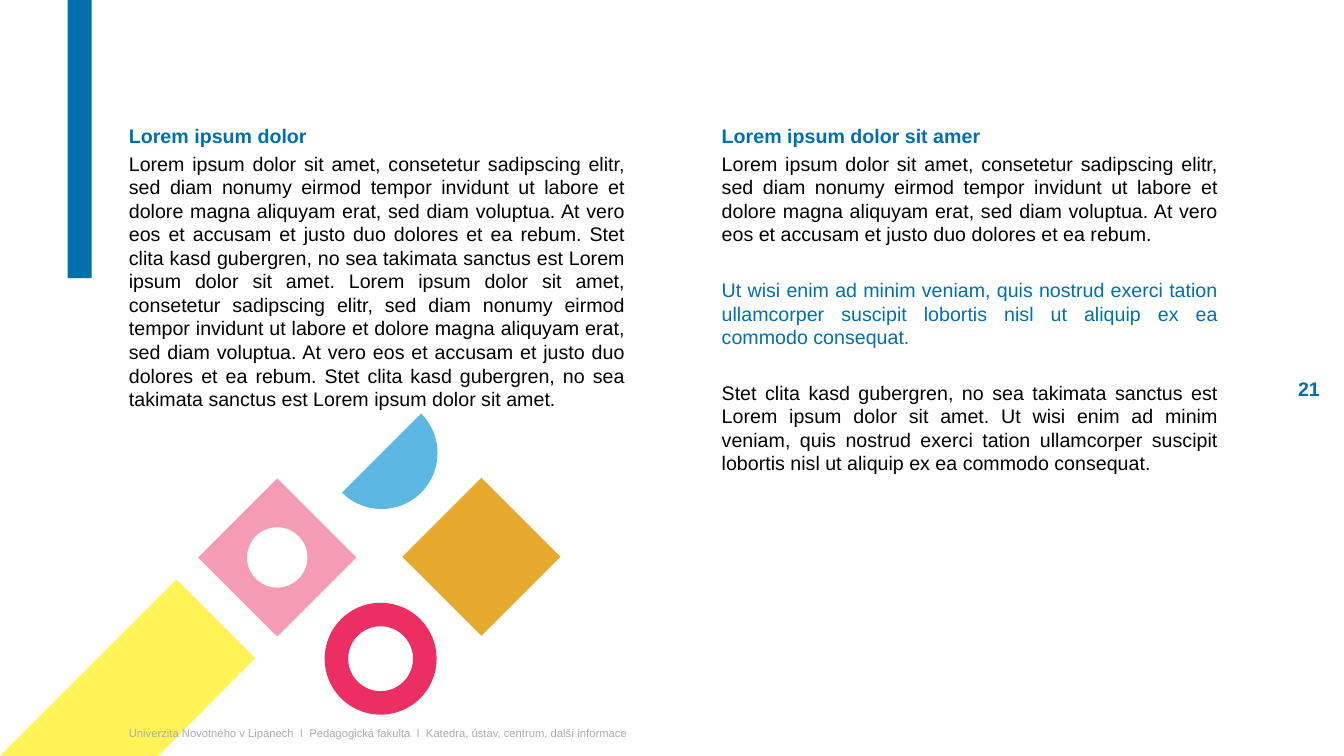
import math

from pptx import Presentation
from pptx.dml.color import RGBColor
from pptx.enum import shapes, text
from pptx.util import Inches, Pt

BLUE = RGBColor(0x00, 0x6F, 0xAD)
SKY = RGBColor(0x5C, 0xB8, 0xE2)
YELLOW = RGBColor(0xFF, 0xF3, 0x58)
PINK = RGBColor(0xF5, 0x9B, 0xB3)
CRIMSON = RGBColor(0xED, 0x2E, 0x62)
GOLD = RGBColor(0xE5, 0xAA, 0x2D)
GREY = RGBColor(0xA9, 0xAB, 0xAE)
BLACK = RGBColor(0x00, 0x00, 0x00)

SECTION_GAP = 23
INTRO = (
    "Lorem ipsum dolor sit amet, consetetur sadipscing elitr, sed diam nonumy "
    "eirmod tempor invidunt ut labore et dolore magna aliquyam erat, sed diam "
    "voluptua. At vero eos et accusam et justo duo dolores et ea rebum."
)
STET = (
    "Stet clita kasd gubergren, no sea takimata sanctus est Lorem ipsum dolor "
    "sit amet."
)
WISI = (
    "Ut wisi enim ad minim veniam, quis nostrud exerci tation ullamcorper "
    "suscipit lobortis nisl ut aliquip ex ea commodo consequat."
)


def paint(shape, color):
    shape.shadow.inherit = False
    shape.fill.solid()
    shape.fill.fore_color.rgb = color
    shape.line.fill.background()


def add_preset(parent, preset, box, color, rotation=0):
    shape = parent.add_shape(preset, *map(Inches, box))
    shape.rotation = rotation
    paint(shape, color)
    return shape


def add_outline(parent, contours, color):
    pen = None
    for contour in contours:
        start, *rest = [(Inches(x), Inches(y)) for x, y in contour]
        if pen is None:
            pen = parent.build_freeform(*start)
        else:
            pen.move_to(*start)
        pen.add_line_segments(rest, close=True)
    paint(pen.convert_to_shape(), color)


def style_run(paragraph, size, color, bold=False):
    font = paragraph.runs[0].font
    font.name = "Arial"
    font.size = Pt(size)
    font.bold = bold
    font.color.rgb = color


def add_column(slide, box, paragraphs):
    frame = slide.shapes.add_textbox(*map(Inches, box)).text_frame
    frame.word_wrap = True
    frame.text = "\n".join(wording for wording, *_ in paragraphs)
    for paragraph, (_, color, bold, gap) in zip(frame.paragraphs, paragraphs):
        paragraph.alignment = text.PP_ALIGN.JUSTIFY
        paragraph.line_spacing = 1.0
        paragraph.space_before = Pt(gap)
        style_run(paragraph, 14, color, bold)


def add_label(slide, box, wording, size, color, bold=False, wrap=True,
              align=text.PP_ALIGN.LEFT):
    frame = slide.shapes.add_textbox(*map(Inches, box)).text_frame
    frame.word_wrap = wrap
    frame.vertical_anchor = text.MSO_ANCHOR.MIDDLE
    frame.text = wording
    frame.paragraphs[0].alignment = align
    style_run(frame.paragraphs[0], size, color, bold)


def add_ornament(slide, left, top):
    ornament = slide.shapes.add_group_shape().shapes
    side = 1.11
    reach = side / math.sqrt(2)

    add_preset(ornament, shapes.MSO_SHAPE.RECTANGLE,
               (left + 4.22, top + 1.03, side, side), GOLD, 45)

    band = [(1.75, 1.81), (0, 3.56), (1.57, 3.56), (2.53, 2.59)]
    add_outline(ornament, [[(left + x, top + y) for x, y in band]], YELLOW)

    center_x, center_y, hole_radius = left + 2.75, top + 1.59, 0.3
    diamond = [(center_x, center_y - reach), (center_x + reach, center_y),
               (center_x, center_y + reach), (center_x - reach, center_y)]
    hole = [(center_x + hole_radius * math.cos(angle),
             center_y - hole_radius * math.sin(angle))
            for angle in (math.tau * step / 72 for step in range(72))]
    add_outline(ornament, [diamond, hole], PINK)

    ring = add_preset(ornament, shapes.MSO_SHAPE.DONUT,
                      (left + 3.22, top + 2.04, side, side), CRIMSON)
    ring.adjustments[0] = 0.21

    half_disc = add_preset(ornament, shapes.MSO_SHAPE.PIE,
                           (left + 3.23, top, side, side), SKY, 315)
    half_disc.adjustments[0] = 0
    half_disc.adjustments[1] = 108


def main():
    deck = Presentation()
    deck.slide_width, deck.slide_height = Inches(13.33), Inches(7.5)
    slide = deck.slides.add_slide(deck.slide_layouts[6])

    add_ornament(slide, 0, 3.94)
    add_label(slide, (1.18, 7.15, 5.49, 0.24),
              "Univerzita Novotného v Lipanech  I  Pedagogická fakulta  I  "
              "Katedra, ústav, centrum, další informace", 8, GREY)
    add_label(slide, (12.75, 3.69, 0.44, 0.34), "21", 14, BLUE, bold=True,
              wrap=False, align=text.PP_ALIGN.RIGHT)
    add_column(slide, (7.06, 1.18, 5.12, 4.17), [
        ("Lorem ipsum dolor sit amer", BLUE, True, 3),
        (INTRO, BLACK, False, 3),
        (WISI, BLUE, False, SECTION_GAP),
        (f"{STET} {WISI}", BLACK, False, SECTION_GAP),
    ])
    add_column(slide, (1.18, 1.18, 5.12, 2.97), [
        ("Lorem ipsum dolor", BLUE, True, 3),
        (f"{INTRO} {STET} {INTRO} {STET}", BLACK, False, 3),
    ])
    add_preset(slide.shapes, shapes.MSO_SHAPE.RECTANGLE,
               (0.67, 0, 0.24, 2.76), BLUE)

    deck.save("out.pptx")


if __name__ == "__main__":
    main()
